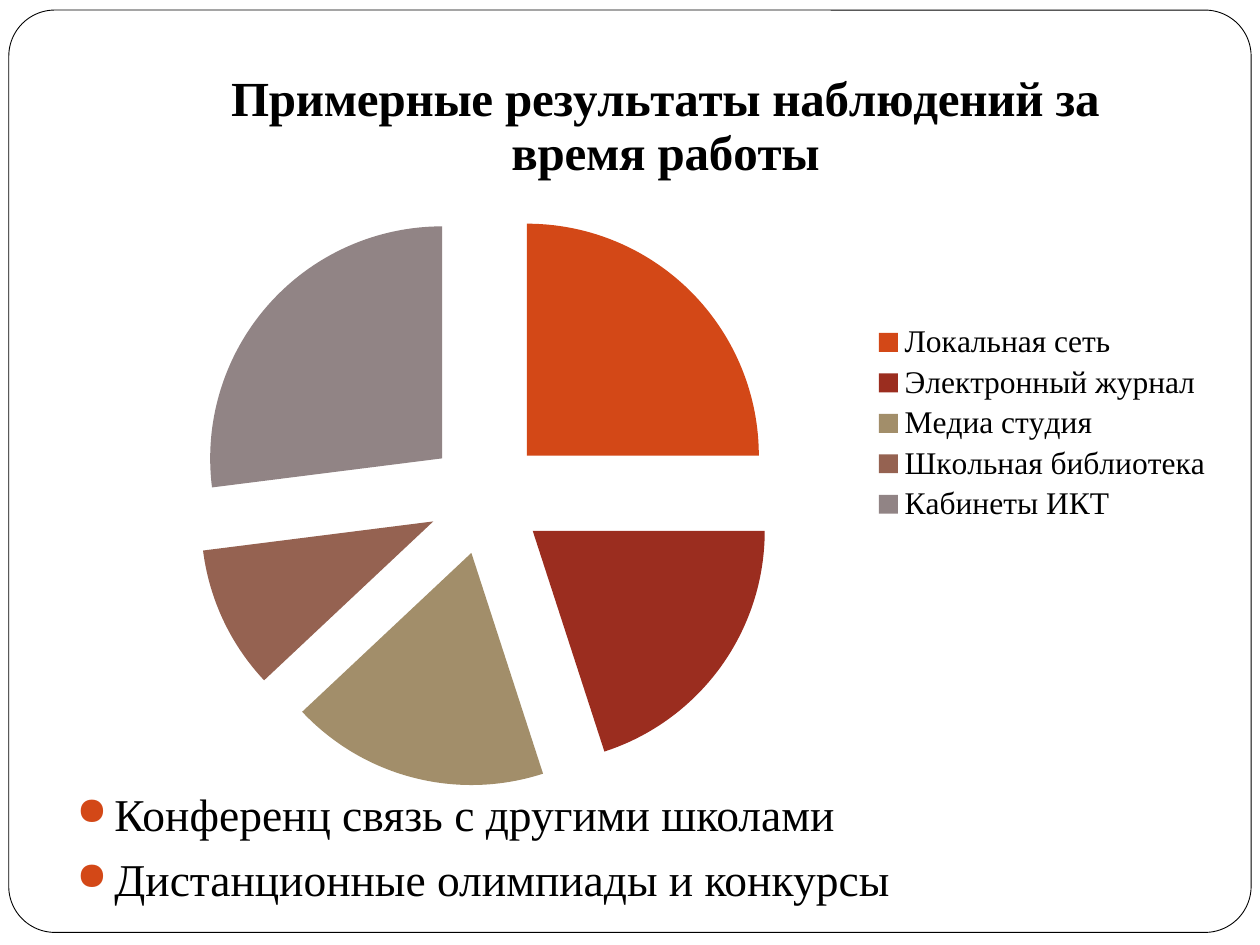
from lxml import etree
from pptx import Presentation
from pptx.chart.data import CategoryChartData
from pptx.dml.color import RGBColor
from pptx.enum.chart import XL_CHART_TYPE, XL_LEGEND_POSITION
from pptx.enum.shapes import MSO_SHAPE
from pptx.enum.text import PP_ALIGN
from pptx.oxml import parse_xml
from pptx.oxml.ns import nsdecls, qn
from pptx.util import Inches, Pt

PIE = XL_CHART_TYPE.PIE_EXPLODED
RIGHT = XL_LEGEND_POSITION.RIGHT
ROUNDED = MSO_SHAPE.ROUNDED_RECTANGLE
LEFT = PP_ALIGN.LEFT

TITLE = "Примерные результаты наблюдений за время работы"
SHARES = [
    ("Локальная сеть", 25, "D34817"),
    ("Электронный журнал", 20, "9B2D1F"),
    ("Медиа студия", 18, "A28E6A"),
    ("Школьная библиотека", 10, "956251"),
    ("Кабинеты ИКТ", 27, "918485"),
]
BULLETS = [
    "Конференц связь с другими школами",
    "Дистанционные олимпиады и конкурсы",
]
THEME = {
    "font": "Times New Roman", "ink": "000000", "paper": "FFFFFF",
    "bullet": "D34817", "title": 28, "legend": 18, "body": 26,
}
WIDTH, HEIGHT = 10, 7.5
FRAME = (0.07, 0.08, 9.86, 7.32)
CHART = (0.83, 0.29, 8.9, 6.14)
BODY = (0.51, 6.19, 8.5, 1.58)
PIE_AREA = {"x": 0.08, "y": 0.22, "w": 0.52, "h": 0.75}
EXPLOSION = 25
INDENT = 0.3


def color(key):
    return RGBColor.from_string(THEME[key])


def style(font, size, bold=False):
    font.name = THEME["font"]
    font.size = Pt(THEME[size])
    font.bold = bold
    font.color.rgb = color("ink")


def add_frame(slide):
    sp = slide.shapes.add_shape(ROUNDED, *map(Inches, FRAME))
    sp.adjustments[0] = 0.05
    sp.shadow.inherit = False
    sp.fill.solid()
    sp.fill.fore_color.rgb = color("paper")
    sp.line.color.rgb = color("ink")
    sp.line.width = Pt(0.5)


def place_plot(chart):
    plot_area = chart._chartSpace.chart.plotArea
    for old in plot_area.findall(qn("c:layout")):
        plot_area.remove(old)
    fields = [("layoutTarget", "inner"), ("xMode", "edge"), ("yMode", "edge")]
    fields += PIE_AREA.items()
    inner = "".join(f'<c:{tag} val="{val}"/>' for tag, val in fields)
    plot_area.insert(0, parse_xml(
        f'<c:layout {nsdecls("c")}><c:manualLayout>{inner}</c:manualLayout></c:layout>'))


def add_pie(slide):
    data = CategoryChartData()
    data.categories = [name for name, _, _ in SHARES]
    data.add_series(TITLE, [value for _, value, _ in SHARES])
    chart = slide.shapes.add_chart(PIE, *map(Inches, CHART), data).chart
    style(chart.font, "legend")
    chart.has_title = True
    tf = chart.chart_title.text_frame
    tf.text = TITLE
    style(tf.paragraphs[0].runs[0].font, "title", bold=True)
    chart.has_legend = True
    chart.legend.position = RIGHT
    chart.legend.include_in_layout = False
    style(chart.legend.font, "legend")
    plot = chart.plots[0]
    plot.vary_by_categories = True
    series = plot.series[0]
    for i, (_, _, rgb) in enumerate(SHARES):
        fill = series.points[i].format.fill
        fill.solid()
        fill.fore_color.rgb = RGBColor.from_string(rgb)
    for node in series._element.iter(qn("c:explosion")):
        node.set("val", str(EXPLOSION))
    place_plot(chart)


def add_bullet(p):
    props = p._p.get_or_add_pPr()
    props.set("marL", str(Inches(INDENT)))
    props.set("indent", str(-Inches(INDENT)))
    tint = etree.SubElement(props, qn("a:buClr"))
    etree.SubElement(tint, qn("a:srgbClr"), val=THEME["bullet"])
    etree.SubElement(props, qn("a:buSzPct"), val="85000")
    etree.SubElement(props, qn("a:buChar"), char="●")


def add_body(slide):
    tf = slide.shapes.add_textbox(*map(Inches, BODY)).text_frame
    tf.word_wrap = True
    for i, text in enumerate(BULLETS):
        p = tf.add_paragraph() if i else tf.paragraphs[0]
        p.text = text
        p.alignment = LEFT
        p.space_before = Pt(5.8)
        style(p.runs[0].font, "body")
        add_bullet(p)


def main():
    prs = Presentation()
    prs.slide_width, prs.slide_height = Inches(WIDTH), Inches(HEIGHT)
    slide = prs.slides.add_slide(prs.slide_layouts[6])
    add_frame(slide)
    add_pie(slide)
    add_body(slide)
    prs.save("out.pptx")


if __name__ == "__main__":
    main()
